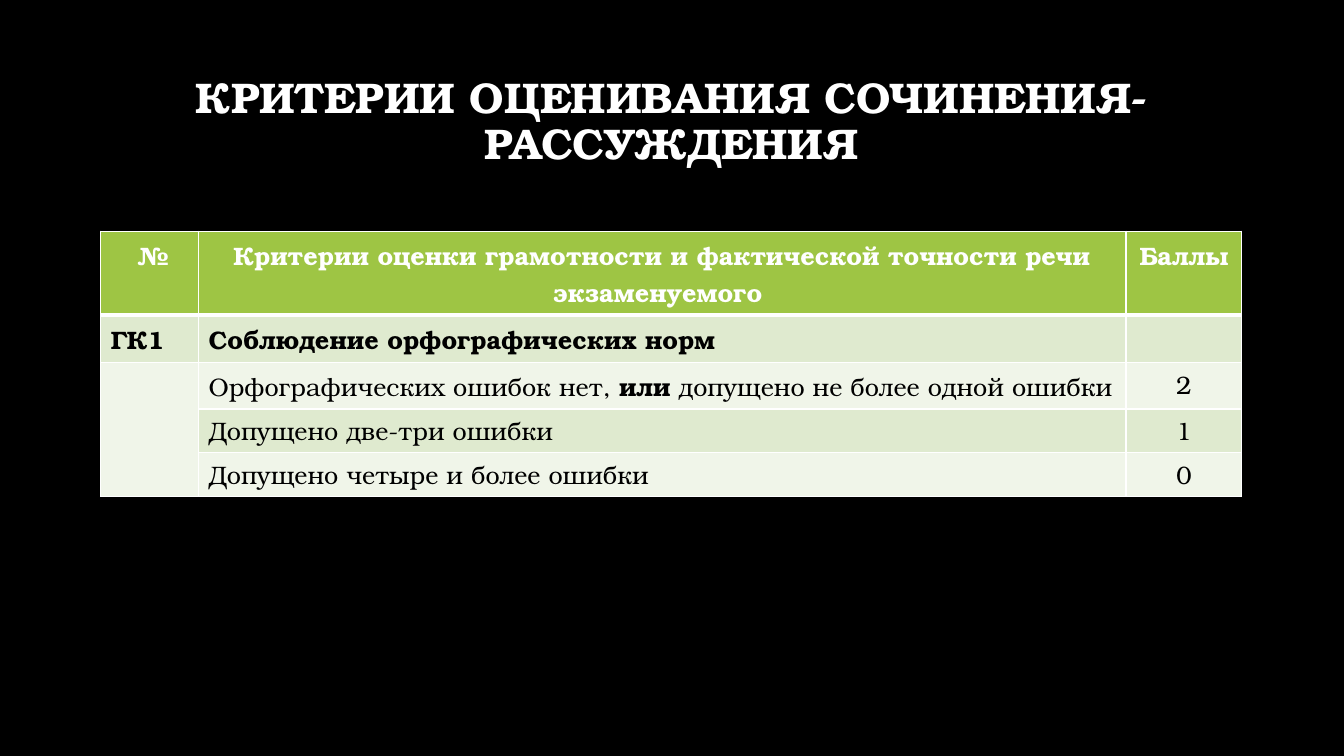
from dataclasses import dataclass

import pptx
import pptx.dml.color
import pptx.enum.text
import pptx.oxml
import pptx.oxml.ns
import pptx.util

COLORS = {"back": "000000", "white": "FFFFFF", "ink": "000000",
          "header": "9EC544", "odd": "DFEACF", "even": "F0F5E9"}
FONT = "TeX Gyre Bonum"
SLIDE_W, SLIDE_H = pptx.util.Inches(13.33), pptx.util.Inches(7.5)
LEFT, WIDTH = 0.075, 0.849  # shares of the slide width
COLUMNS = (0.97, 9.2, 1.15)  # relative column widths
ALIGN = pptx.enum.text.PP_ALIGN


@dataclass(frozen=True)
class Row:
    cells: tuple[str, str, str]
    height: float  # share of the slide height
    fill: str
    bold: bool = False


# Asterisks enclose bold words
ROWS = [
    Row(("№", "Критерии оценки грамотности и фактической точности речи экзаменуемого ",
         "Баллы"), 0.111, "header", bold=True),
    Row(("ГК1", "Соблюдение орфографических норм", ""), 0.061, "odd", bold=True),
    Row(("", "Орфографических ошибок нет, *или* допущено не более одной ошибки", "2"),
        0.062, "even"),
    Row(("", "Допущено две-три ошибки", "1"), 0.058, "odd"),
    Row(("", "Допущено четыре и более ошибки", "0"), 0.058, "even"),
]
ROWS[0] = Row((" №",) + ROWS[0].cells[1:], ROWS[0].height, ROWS[0].fill, True)


def rgb(name: str) -> pptx.dml.color.RGBColor:
    return pptx.dml.color.RGBColor.from_string(COLORS[name])


def write(tf, text: str, *, size: float = 18, color: str = "ink", bold: bool = False,
          align=ALIGN.LEFT, spacing: float = 1.0) -> None:
    p = tf.paragraphs[0]
    p.alignment, p.line_spacing = align, spacing
    for i, part in enumerate(text.split("*")):
        if part:
            r = p.add_run()
            r.text = part
            r.font.name, r.font.size = FONT, pptx.util.Pt(size)
            r.font.bold = bold or i % 2 == 1
            r.font.color.rgb = rgb(color)


def set_borders(cell, top: float, bottom: float) -> None:
    props = cell._tc.get_or_add_tcPr()
    sides = {"lnL": 1, "lnR": 1, "lnT": top, "lnB": bottom}
    for i, (side, width) in enumerate(sides.items()):
        props.insert(i, pptx.oxml.parse_xml(
            f'<a:{side} {pptx.oxml.ns.nsdecls("a")} w="{pptx.util.Pt(width)}">'
            f'<a:solidFill><a:srgbClr val="{COLORS["white"]}"/></a:solidFill></a:{side}>'))


def add_title(slide, text: str) -> None:
    sp = slide.shapes.title
    sp.left, sp.top = int(LEFT * SLIDE_W), int(0.09 * SLIDE_H)
    sp.width, sp.height = int(WIDTH * SLIDE_W), int(0.145 * SLIDE_H)
    tf = sp.text_frame
    tf.word_wrap = True
    tf.auto_size = pptx.enum.text.MSO_AUTO_SIZE.NONE
    tf.vertical_anchor = pptx.enum.text.MSO_ANCHOR.MIDDLE
    write(tf, text, size=30.6, color="white", bold=True, align=ALIGN.CENTER, spacing=0.9)


def add_criteria(slide, rows: list[Row]) -> None:
    height = sum(row.height for row in rows)
    table = slide.shapes.add_table(
        len(rows), len(COLUMNS), int(LEFT * SLIDE_W), int(0.306 * SLIDE_H),
        int(WIDTH * SLIDE_W), int(height * SLIDE_H)).table
    table.horz_banding = False
    for column, share in zip(table.columns, COLUMNS):
        column.width = int(share / sum(COLUMNS) * WIDTH * SLIDE_W)
    for i, row in enumerate(rows):
        table.rows[i].height = int(row.height * SLIDE_H)
        for j, text in enumerate(row.cells):
            cell = table.cell(i, j)
            cell.fill.solid()
            cell.fill.fore_color.rgb = rgb(row.fill)
            set_borders(cell, top=3 if i == 1 else 1, bottom=3 if i == 0 else 1)
            centred = i == 0 or j == 2
            write(cell.text_frame, text, bold=row.bold,
                  color="white" if i == 0 else "ink",
                  align=ALIGN.CENTER if centred else ALIGN.LEFT)
    table.cell(2, 0).merge(table.cell(len(rows) - 1, 0))


def main() -> None:
    prs = pptx.Presentation()
    prs.slide_width, prs.slide_height = SLIDE_W, SLIDE_H
    slide = prs.slides.add_slide(prs.slide_layouts[5])
    # Background
    slide.background.fill.solid()
    slide.background.fill.fore_color.rgb = rgb("back")
    # Title and table
    add_title(slide, "КРИТЕРИИ ОЦЕНИВАНИЯ СОЧИНЕНИЯ-РАССУЖДЕНИЯ")
    add_criteria(slide, ROWS)
    prs.save("out.pptx")


if __name__ == "__main__":
    main()
